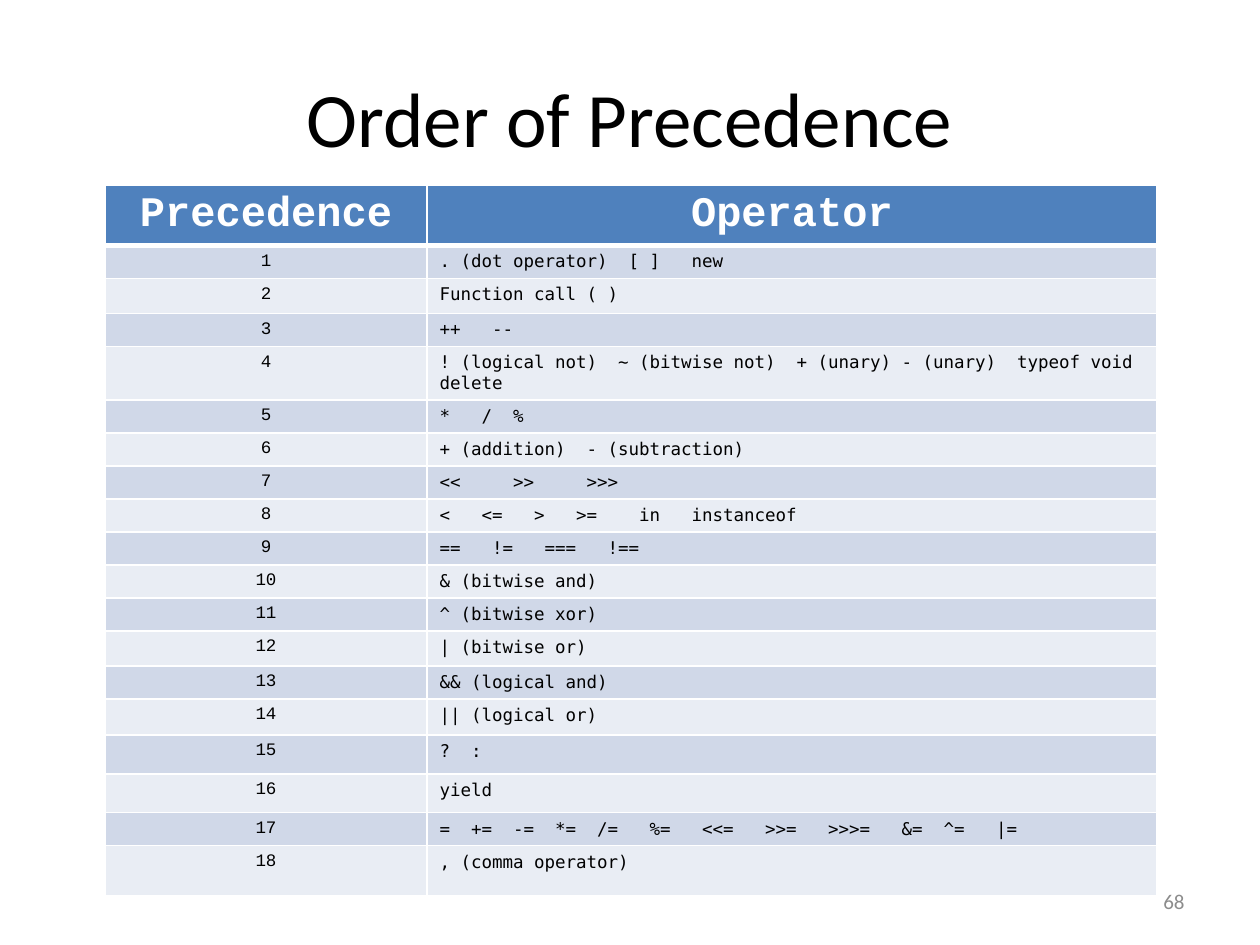
import pptx
import pptx.util
import pptx.dml.color
import pptx.enum.text
import pptx.oxml
import pptx.oxml.ns

Pt = pptx.util.Pt
PP_ALIGN = pptx.enum.text.PP_ALIGN
MSO_ANCHOR = pptx.enum.text.MSO_ANCHOR

HEADINGS = ("Precedence", "Operator")
OPERATORS = [
    ". (dot operator)  [ ]   new",
    "Function call ( )",
    "++   --",
    "! (logical not)  ~ (bitwise not)  + (unary) - (unary)  typeof void delete",
    "*   /  %",
    "+ (addition)  - (subtraction)",
    "<<     >>     >>>",
    "<   <=   >   >=    in   instanceof",
    "==   !=   ===   !==",
    "& (bitwise and)",
    "^ (bitwise xor)",
    "| (bitwise or)",
    "&& (logical and)",
    "|| (logical or)",
    "?  :",
    "yield",
    "=  +=  -=  *=  /=   %=   <<=   >>=   >>>=   &=  ^=   |=",
    ", (comma operator)",
]
ROW_HEIGHT = 18.8
TALL_ROWS = {0: 34, 2: 20, 4: 30.2, 12: 20, 14: 20.5, 15: 22.3, 16: 22, 18: 28.8}
PRECEDENCE_WIDTH = 184
BAND_FILLS = ("E9EDF4", "D0D8E8")


def color(hex_string):
    return pptx.dml.color.RGBColor.from_string(hex_string)


def format_paragraph(paragraph, font_name, size, hex_string, align, bold=False):
    paragraph.alignment = align
    font = paragraph.font
    font.name, font.size, font.bold = font_name, Pt(size), bold
    font.color.rgb = color(hex_string)


def add_cell_borders(cell, top, bottom):
    """White borders; top and bottom widths vary, the sides are 1 pt."""
    properties = cell._tc.get_or_add_tcPr()
    for side, width in (("L", 1), ("R", 1), ("T", top), ("B", bottom)):
        properties.append(pptx.oxml.parse_xml(
            f'<a:ln{side} {pptx.oxml.ns.nsdecls("a")} w="{Pt(width)}">'
            f'<a:solidFill><a:srgbClr val="FFFFFF"/></a:solidFill></a:ln{side}>'))


def add_title(slide, left, top, width, height):
    title = slide.shapes.title
    title.left, title.top, title.width, title.height = map(Pt, (left, top, width, height))
    title.text_frame.text = "Order of Precedence"
    title.text_frame.vertical_anchor = MSO_ANCHOR.MIDDLE
    format_paragraph(title.text_frame.paragraphs[0], "Calibri", 44, "000000", PP_ALIGN.CENTER)


def add_precedence_table(slide, left, top, width):
    rows = [HEADINGS] + [(str(rank), text) for rank, text in enumerate(OPERATORS, 1)]
    heights = [TALL_ROWS.get(index, ROW_HEIGHT) for index in range(len(rows))]
    table = slide.shapes.add_table(
        len(rows), 2, Pt(left), Pt(top), Pt(width), Pt(sum(heights))).table
    table.columns[0].width = Pt(PRECEDENCE_WIDTH)
    table.columns[1].width = Pt(width - PRECEDENCE_WIDTH)

    for row, texts in enumerate(rows):
        table.rows[row].height = Pt(heights[row])
        is_header = row == 0
        for column, text in enumerate(texts):
            cell = table.cell(row, column)
            cell.text = text
            add_cell_borders(cell, top=3 if row == 1 else 1, bottom=3 if is_header else 1)
            cell.fill.solid()
            cell.fill.fore_color.rgb = color("4F81BD" if is_header else BAND_FILLS[row % 2])
            paragraph = cell.text_frame.paragraphs[0]
            if is_header:
                format_paragraph(paragraph, "Courier New", 24, "FFFFFF", PP_ALIGN.CENTER, True)
            elif column == 0:
                format_paragraph(paragraph, "Courier New", 10, "000000", PP_ALIGN.CENTER)
            else:
                format_paragraph(paragraph, "DejaVu Sans Mono", 10, "000000", PP_ALIGN.LEFT)


def add_page_number(slide, left, top, width, height):
    frame = slide.shapes.add_textbox(Pt(left), Pt(top), Pt(width), Pt(height)).text_frame
    frame.word_wrap = True
    frame.vertical_anchor = MSO_ANCHOR.MIDDLE
    frame.text = "68"
    format_paragraph(frame.paragraphs[0], "Calibri", 12, "8C8C8C", PP_ALIGN.RIGHT)


def main():
    presentation = pptx.Presentation()
    presentation.slide_width, presentation.slide_height = Pt(720), Pt(540)
    slide = presentation.slides.add_slide(presentation.slide_layouts[5])
    add_title(slide, 36, 21.6, 648, 90)
    add_precedence_table(slide, 60, 105.8, 601)
    add_page_number(slide, 516, 500.5, 168, 28.8)
    presentation.save("out.pptx")


if __name__ == "__main__":
    main()
